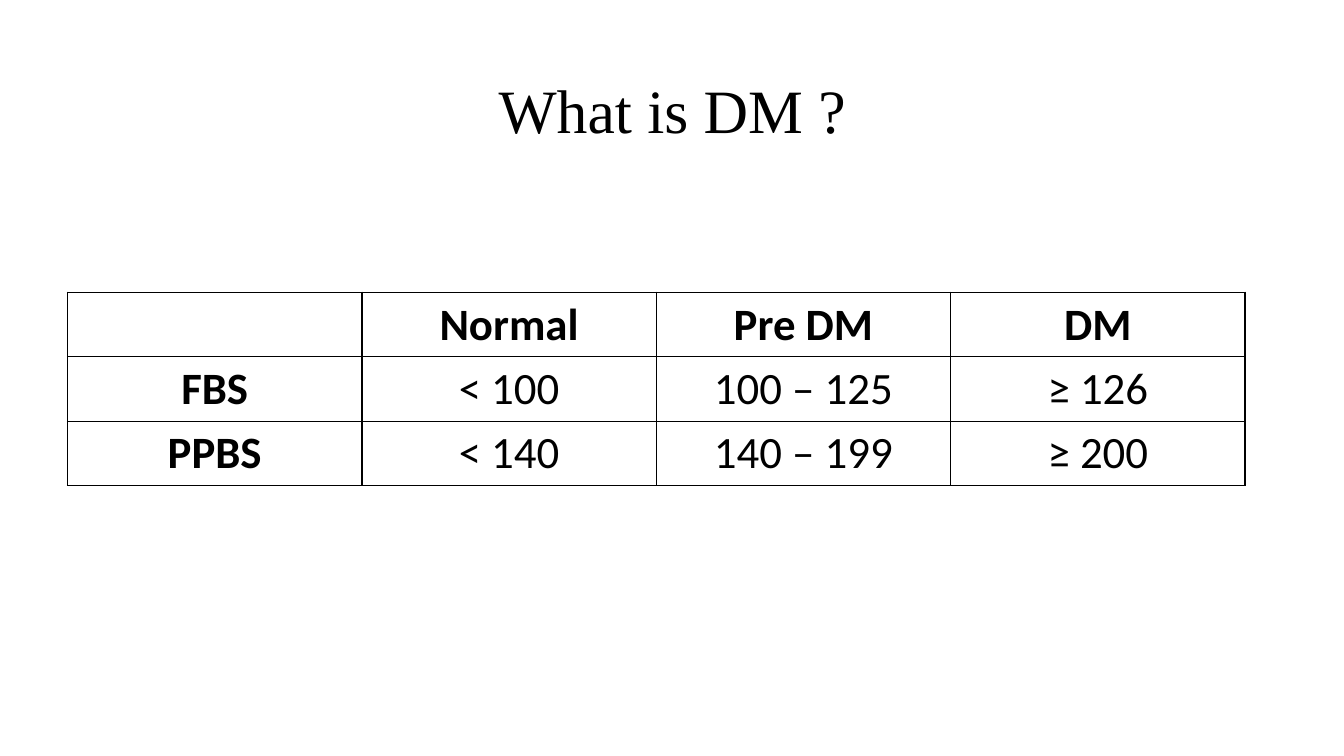
import pptx
import pptx.dml.color
import pptx.enum.text
import pptx.oxml
import pptx.oxml.ns
import pptx.util
import lxml.etree

Inches = pptx.util.Inches
Pt = pptx.util.Pt

TITLE = "What is DM ?"
ROWS = [
    ["", "Normal", "Pre DM", "DM"],
    ["FBS", "< 100", "100 – 125", "≥ 126"],
    ["PPBS", "< 140", "140 – 199", "≥ 200"],
]
BLACK = "000000"
WHITE = "FFFFFF"
TABLE_LEFT, TABLE_TOP = 0.67, 2.9
COLUMN_WIDTH, ROW_HEIGHT = 2.92, 0.64


def color(hex_string):
    return pptx.dml.color.RGBColor.from_string(hex_string)


def write(paragraph, text, font_name, size, bold=False):
    paragraph.alignment = pptx.enum.text.PP_ALIGN.CENTER
    run = paragraph.add_run()
    run.text = text
    run.font.name = font_name
    run.font.size = Pt(size)
    run.font.bold = bold
    run.font.color.rgb = color(BLACK)


def add_borders(cell):
    properties = cell._tc.get_or_add_tcPr()
    for side in ("a:lnL", "a:lnR", "a:lnT", "a:lnB"):
        line = lxml.etree.SubElement(properties, pptx.oxml.ns.qn(side), w=str(Pt(1)))
        fill = lxml.etree.SubElement(line, pptx.oxml.ns.qn("a:solidFill"))
        lxml.etree.SubElement(fill, pptx.oxml.ns.qn("a:srgbClr"), val=BLACK)


def add_title(slide):
    box = slide.shapes.add_textbox(Inches(0.92), Inches(0.4), Inches(11.5), Inches(1.45))
    frame = box.text_frame
    frame.word_wrap = True
    frame.vertical_anchor = pptx.enum.text.MSO_ANCHOR.MIDDLE
    frame.paragraphs[0].line_spacing = 0.9
    write(frame.paragraphs[0], TITLE, "Times New Roman", 44)


def add_glucose_table(slide):
    row_count, column_count = len(ROWS), len(ROWS[0])
    table = slide.shapes.add_table(
        row_count, column_count, Inches(TABLE_LEFT), Inches(TABLE_TOP),
        Inches(COLUMN_WIDTH * column_count), Inches(ROW_HEIGHT * row_count),
    ).table
    table.horz_banding = False
    for column in table.columns:
        column.width = Inches(COLUMN_WIDTH)
    for row_index, values in enumerate(ROWS):
        table.rows[row_index].height = Inches(ROW_HEIGHT)
        for column_index, value in enumerate(values):
            cell = table.cell(row_index, column_index)
            cell.margin_left = cell.margin_right = Inches(0.13)
            cell.margin_top = cell.margin_bottom = Inches(0.05)
            add_borders(cell)
            cell.fill.solid()
            cell.fill.fore_color.rgb = color(WHITE)
            if value:
                is_heading = row_index == 0 or column_index == 0
                write(cell.text_frame.paragraphs[0], value, "Calibri", 32, is_heading)


def main():
    presentation = pptx.Presentation()
    presentation.slide_width = Inches(13.33)
    presentation.slide_height = Inches(7.5)
    slide = presentation.slides.add_slide(presentation.slide_layouts[6])
    add_title(slide)
    add_glucose_table(slide)
    presentation.save("out.pptx")


if __name__ == "__main__":
    main()
